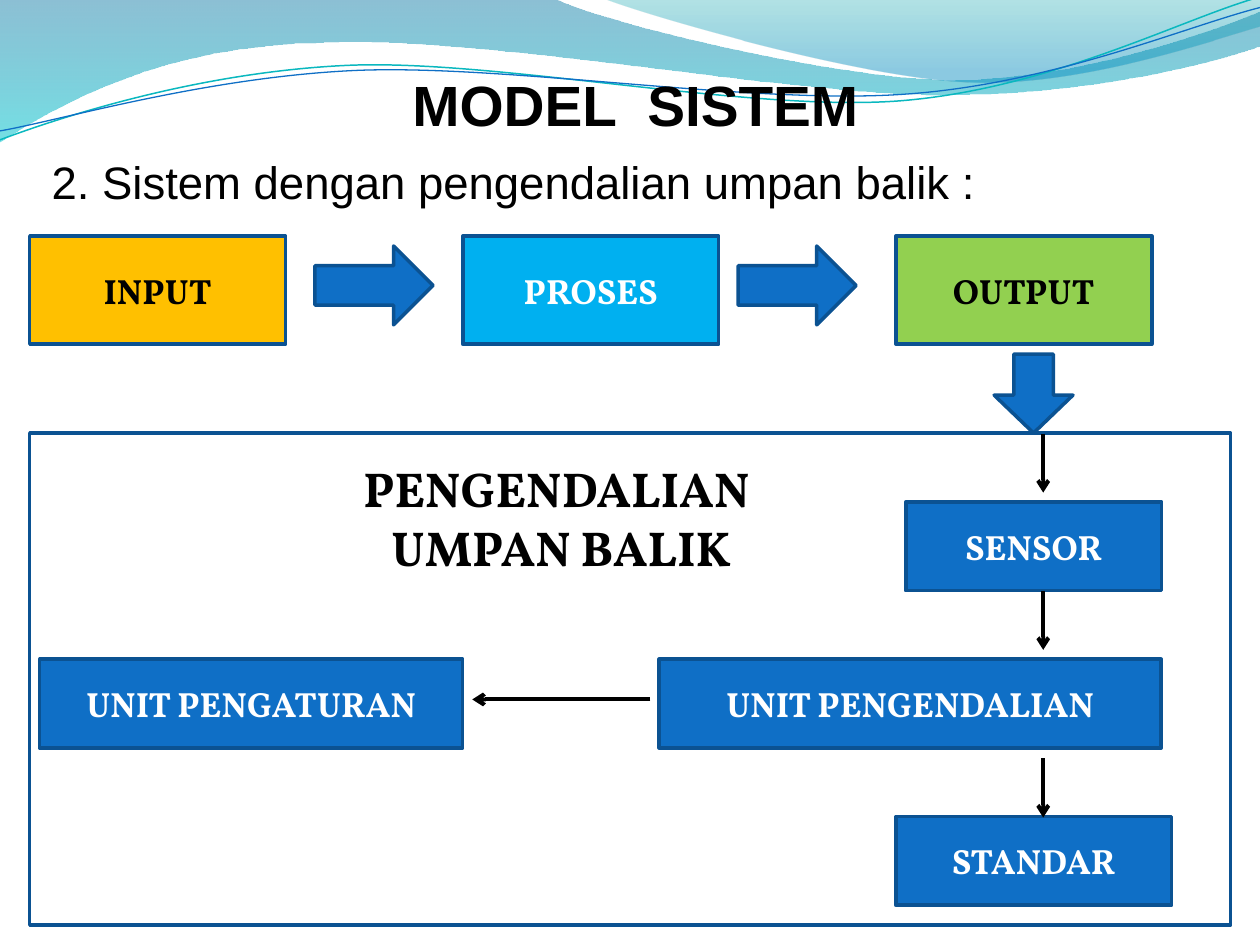
from dataclasses import dataclass

from lxml import etree
from pptx import Presentation
from pptx.dml.color import RGBColor
from pptx.enum.shapes import MSO_CONNECTOR, MSO_SHAPE
from pptx.enum.text import MSO_ANCHOR, PP_ALIGN
from pptx.oxml.ns import qn
from pptx.util import Cm, Pt

RECTANGLE = MSO_SHAPE.RECTANGLE
RIGHT_ARROW = MSO_SHAPE.RIGHT_ARROW
STRAIGHT = MSO_CONNECTOR.STRAIGHT
CENTER, LEFT = PP_ALIGN.CENTER, PP_ALIGN.LEFT
TOP, MIDDLE, BOTTOM = MSO_ANCHOR.TOP, MSO_ANCHOR.MIDDLE, MSO_ANCHOR.BOTTOM


@dataclass(frozen=True)
class Theme:
    black: str = "000000"
    white: str = "FFFFFF"
    blue: str = "0F6FC6"
    outline: str = "0B5292"
    amber: str = "FFC000"
    sky: str = "00B0F0"
    green: str = "92D050"
    teal: str = "0AB8BF"
    heading_font: str = "Arial"
    diagram_font: str = "Vollkorn"
    title_size: float = 32.4
    body_size: float = 26
    label_size: float = 28
    box_size: float = 20
    outline_width: float = 2
    connector_width: float = 2.25


THEME = Theme()


@dataclass(frozen=True)
class Block:
    """A preset shape; lengths in centimetres."""
    left: float
    top: float
    width: float
    height: float
    text: str = ""
    fill: str = THEME.blue
    color: str = THEME.white
    preset: int = RECTANGLE
    rotation: float = 0
    adjustments: tuple = ()


@dataclass(frozen=True)
class Stop:
    position: float
    color: str
    opacity: int


@dataclass(frozen=True)
class Wave:
    """One-point segments are straight, three-point segments are Bezier curves."""
    start: tuple
    segments: tuple
    stops: tuple = ()
    line: str = ""
    width: float = 0
    rotation: float = 0


WAVES = (
    Wave((0, -0.03), (
        ((11.18, -0.03),),
        ((12.09, 0.43), (16.87, 1.6), (19.25, 1.6)),
        ((21.67, 1.6), (24.33, 0.66), (25.4, 0.23)),
        ((25.43, 0.91),),
        ((24.97, 1.12), (22.1, 1.93), (18.95, 1.91)),
        ((15.8, 1.91), (9.7, 0.71), (6.53, 0.86)),
        ((3.28, 0.89), (1.17, 2.11), (-0.03, 2.87)),
        ((0, -0.03),),
    ), stops=(Stop(0, "0074A1", 45), Stop(1, "00C6CF", 55))),
    Wave((12.17, -0.03), (
        ((12.93, 0.28), (17.32, 1.57), (19.53, 1.65)),
        ((21.74, 1.75), (24.41, 0.81), (25.4, 0.53)),
        ((25.4, 0),),
        ((12.17, -0.03),),
    ), stops=(Stop(0, "00A1A9", 30), Stop(0.8, "008BBF", 45))),
    Wave((-0.05, 2.22), (
        ((1.19, 1.82), (4.02, 1.04), (7.05, 1.05)),
        ((10.05, 1.07), (15.02, 2.37), (18.08, 2.29)),
        ((21.13, 2.2), (23.86, 0.91), (25.41, 0.55)),
    ), line=THEME.teal, width=0.85, rotation=357.3),
    Wave((-0.04, 2.04), (
        ((1.16, 1.89), (4.17, 1.15), (7.2, 1.16)),
        ((10.25, 1.18), (15.13, 2.23), (18.19, 2.16)),
        ((21.21, 2.1), (23.93, 1.06), (25.46, 0.75)),
    ), line=THEME.blue, width=0.75, rotation=357.3),
)


def rgb(color: str) -> RGBColor:
    return RGBColor.from_string(color)


def write_text(shape, text: str, *, size: float, font: str = THEME.diagram_font,
               color: str = THEME.black, bold: bool = True,
               align: int = CENTER, anchor: int = MIDDLE) -> None:
    frame = shape.text_frame
    frame.word_wrap = True
    frame.vertical_anchor = anchor
    frame.text = text
    for paragraph in frame.paragraphs:
        paragraph.alignment = align
        paragraph.font.size = Pt(size)
        paragraph.font.name = font
        paragraph.font.bold = bold
        paragraph.font.color.rgb = rgb(color)


def add_text_box(slide, left: float, top: float, width: float, height: float,
                 text: str, **text_format):
    shape = slide.shapes.add_textbox(Cm(left), Cm(top), Cm(width), Cm(height))
    write_text(shape, text, **text_format)
    return shape


def add_block(slide, block: Block) -> None:
    shape = slide.shapes.add_shape(block.preset, Cm(block.left), Cm(block.top),
                                   Cm(block.width), Cm(block.height))
    shape.shadow.inherit = False
    shape.rotation = block.rotation
    for index, value in enumerate(block.adjustments):
        shape.adjustments[index] = value
    shape.fill.solid()
    shape.fill.fore_color.rgb = rgb(block.fill)
    shape.line.color.rgb = rgb(THEME.outline)
    shape.line.width = Pt(THEME.outline_width)
    if block.text:
        write_text(shape, block.text, size=THEME.box_size, color=block.color)


def add_arrow(slide, start: tuple, end: tuple) -> None:
    connector = slide.shapes.add_connector(STRAIGHT, *map(Cm, start + end))
    connector.line.color.rgb = rgb(THEME.black)
    connector.line.width = Pt(THEME.connector_width)
    etree.SubElement(connector.line._get_or_add_ln(), qn("a:tailEnd"), type="arrow")
    etree.SubElement(connector._element.spPr, qn("a:effectLst"))


def bend_segments(shape, segments: tuple) -> None:
    """Join the three line steps of each curved segment into one Bezier curve."""
    steps = iter(list(shape._element.iter(qn("a:lnTo"))))
    for segment in segments:
        lines = [next(steps) for _ in segment]
        if len(lines) == 3:
            curve = etree.Element(qn("a:cubicBezTo"))
            lines[0].addprevious(curve)
            for line in lines:
                curve.append(line[0])
                line.getparent().remove(line)


def add_wave(slide, wave: Wave) -> None:
    points = [(Cm(x), Cm(y)) for segment in wave.segments for x, y in segment]
    builder = slide.shapes.build_freeform(*map(Cm, wave.start))
    builder.add_line_segments(points, close=bool(wave.stops))
    shape = builder.convert_to_shape()
    bend_segments(shape, wave.segments)
    shape.shadow.inherit = False
    shape.rotation = wave.rotation
    if not wave.stops:
        shape.fill.background()
        shape.line.color.rgb = rgb(wave.line)
        shape.line.width = Pt(wave.width)
        return
    shape.line.fill.background()
    shape.fill.gradient()
    shape.fill.gradient_angle = 270
    for gradient_stop, stop in zip(shape.fill.gradient_stops, wave.stops):
        gradient_stop.position = stop.position
        gradient_stop.color.rgb = rgb(stop.color)
        color_element = gradient_stop._gs.find(qn("a:srgbClr"))
        etree.SubElement(color_element, qn("a:alpha"), val=str(stop.opacity * 1000))


def main() -> None:
    presentation = Presentation()
    presentation.slide_width, presentation.slide_height = Cm(25.4), Cm(19.05)
    slide = presentation.slides.add_slide(presentation.slide_layouts[6])

    # Wave header
    for wave in WAVES:
        add_wave(slide, wave)

    # Control frame, title and subtitle
    add_block(slide, Block(0.6, 8.73, 24.21, 9.92, fill=THEME.white))
    title = add_text_box(slide, 1.38, 1.21, 22.86, 1.57, "MODEL  SISTEM", size=THEME.title_size,
                         font=THEME.heading_font, anchor=BOTTOM)
    title.text_frame.margin_left = title.text_frame.margin_right = 0
    title.text_frame.margin_bottom = 0
    add_text_box(slide, 0.79, 2.99, 23.83, 15.29, "2. Sistem dengan pengendalian umpan balik :",
                 size=THEME.body_size, font=THEME.heading_font, bold=False,
                 align=LEFT, anchor=TOP)

    # Main flow
    stages = (("INPUT", THEME.amber, THEME.black), ("PROSES", THEME.sky, THEME.white),
              ("OUTPUT", THEME.green, THEME.black))
    for column, (text, fill, color) in enumerate(stages):
        add_block(slide, Block(0.6 + 8.73 * column, 4.76, 5.16, 2.18, text, fill, color))

    # Feedback units
    units = (("SENSOR", 18.26, 5.16, 0), ("UNIT PENGENDALIAN", 13.29, 10.12, 1),
             ("STANDAR", 18.06, 5.56, 2), ("UNIT PENGATURAN", 0.8, 8.53, 1))
    for text, left, width, row in units:
        add_block(slide, Block(left, 10.12 + 3.17 * row, width, 1.79, text))

    # Block arrows
    for left in (6.35, 14.88):
        add_block(slide, Block(left, 4.96, 2.38, 1.59, preset=RIGHT_ARROW))
    add_block(slide, Block(20.04, 7.14, 1.59, 1.59, preset=RIGHT_ARROW, rotation=90,
                           adjustments=(0.5, 0.48)))

    # Feedback label and thin arrows
    add_text_box(slide, 5.56, 9.12, 11.51, 2.64, "PENGENDALIAN \nUMPAN BALIK",
                 size=THEME.label_size, anchor=TOP)
    for top in (8.74, 11.91, 15.29):
        add_arrow(slide, (21.03, top), (21.03, top + 1.19))
    add_arrow(slide, (13.11, 14.1), (9.52, 14.1))

    presentation.save("out.pptx")


if __name__ == "__main__":
    main()
